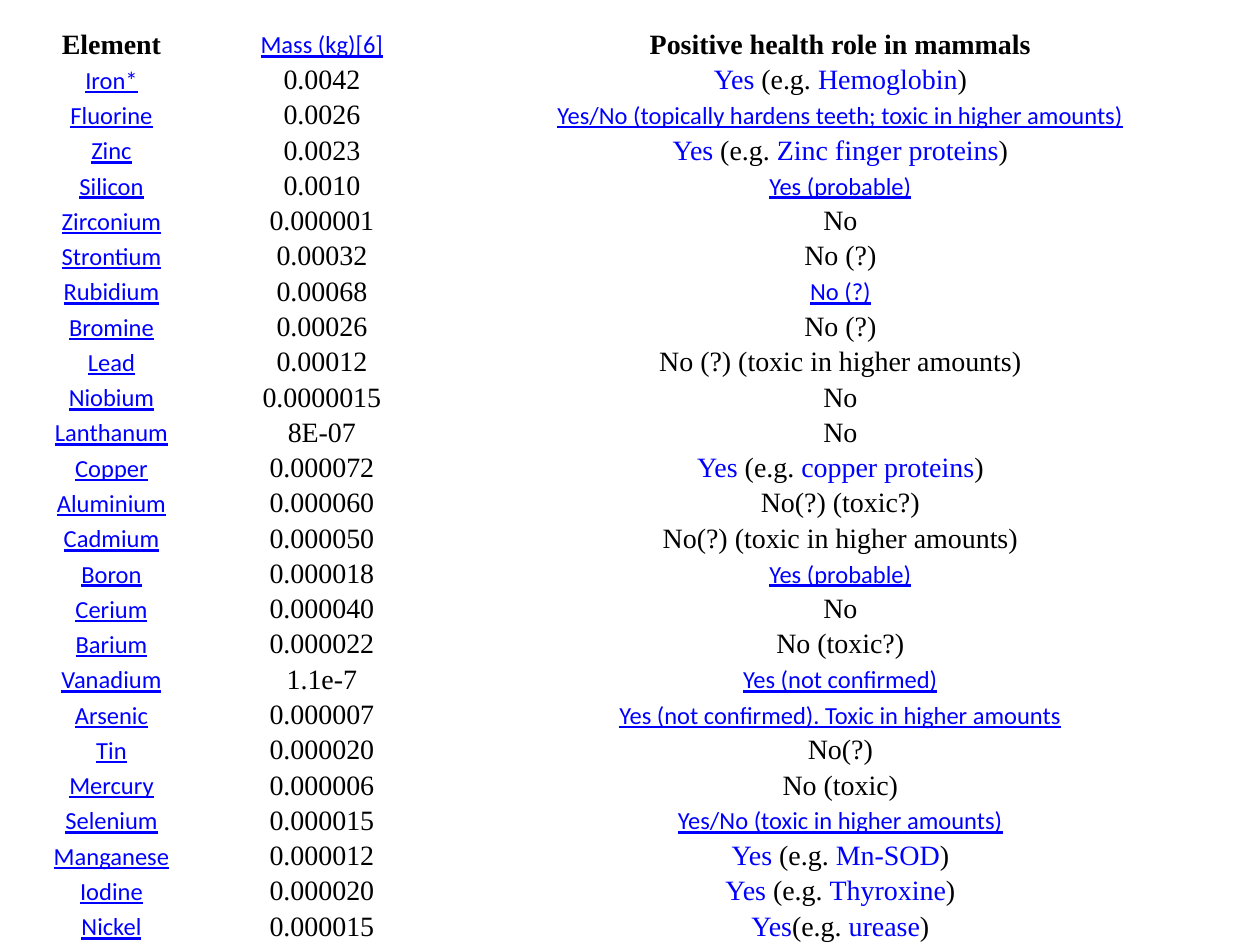
from typing import NamedTuple

from pptx import Presentation
from pptx.dml.color import RGBColor
from pptx.enum.text import MSO_ANCHOR, PP_ALIGN
from pptx.util import Inches, Pt

BLACK = RGBColor(0x00, 0x00, 0x00)
BLUE = RGBColor(0x00, 0x00, 0xFF)
BOTTOM = MSO_ANCHOR.BOTTOM
CENTER = PP_ALIGN.CENTER

# Text formats
SERIF = {"name": "Times New Roman", "size": Pt(16), "bold": False, "underline": False}
HEAD = SERIF | {"bold": True}
LINK = {"name": "Calibri", "size": Pt(14), "bold": False, "underline": True}

# Table layout
WIDTHS = (1.77, 1.57, 6.66)
HEAD_H, ROW_H = 0.49, 0.28
INSET = Inches(0.01)


class Part(NamedTuple):
    text: str
    style: dict
    color: RGBColor = BLACK


class Row(NamedTuple):
    name: str
    mass: str
    role: list[Part]


def plain(text: str) -> list[Part]:
    return [Part(text, SERIF)]


def link(text: str) -> list[Part]:
    return [Part(text, LINK, BLUE)]


def head(text: str) -> list[Part]:
    return [Part(text, HEAD)]


def yes(sample: str, gap: str = " ") -> list[Part]:
    """A positive role with its example in blue."""
    return [
        Part("Yes", SERIF, BLUE),
        Part(f"{gap}(e.g. ", SERIF),
        Part(sample, SERIF, BLUE),
        Part(")", SERIF),
    ]


ROWS = [
    Row("Iron*", "0.0042", yes("Hemoglobin")),
    Row("Fluorine", "0.0026",
        link("Yes/No (topically hardens teeth; toxic in higher amounts)")),
    Row("Zinc", "0.0023", yes("Zinc finger proteins")),
    Row("Silicon", "0.0010", link("Yes (probable)")),
    Row("Zirconium", "0.000001", plain("No")),
    Row("Strontium", "0.00032", plain("No (?)")),
    Row("Rubidium", "0.00068", link("No (?)")),
    Row("Bromine", "0.00026", plain("No (?)")),
    Row("Lead", "0.00012", plain("No (?) (toxic in higher amounts)")),
    Row("Niobium", "0.0000015", plain("No")),
    Row("Lanthanum", "8E-07", plain("No")),
    Row("Copper", "0.000072", yes("copper proteins")),
    Row("Aluminium", "0.000060", plain("No(?) (toxic?)")),
    Row("Cadmium", "0.000050", plain("No(?) (toxic in higher amounts)")),
    Row("Boron", "0.000018", link("Yes (probable)")),
    Row("Cerium", "0.000040", plain("No")),
    Row("Barium", "0.000022", plain("No (toxic?)")),
    Row("Vanadium", "1.1e-7", link("Yes (not confirmed)")),
    Row("Arsenic", "0.000007", link("Yes (not confirmed). Toxic in higher amounts")),
    Row("Tin", "0.000020", plain("No(?)")),
    Row("Mercury", "0.000006", plain("No (toxic)")),
    Row("Selenium", "0.000015", link("Yes/No (toxic in higher amounts)")),
    Row("Manganese", "0.000012", yes("Mn-SOD")),
    Row("Iodine", "0.000020", yes("Thyroxine")),
    Row("Nickel", "0.000015", yes("urease", gap="")),
]


def fill_cell(cell, parts: list[Part]) -> None:
    cell.fill.background()
    cell.vertical_anchor = BOTTOM
    for side in ("left", "top", "right", "bottom"):
        setattr(cell, f"margin_{side}", INSET)
    para = cell.text_frame.paragraphs[0]
    para.alignment = CENTER
    for part in parts:
        run = para.add_run()
        run.text = part.text
        for key, value in part.style.items():
            setattr(run.font, key, value)
        run.font.color.rgb = part.color


def add_grid(slide, grid: list[list[list[Part]]]) -> None:
    high = HEAD_H + ROW_H * (len(grid) - 1)
    table = slide.shapes.add_table(
        len(grid), len(WIDTHS), 0, 0, Inches(sum(WIDTHS)), Inches(high)
    ).table
    table.first_row = False
    table.horz_banding = False
    for col, width in zip(table.columns, WIDTHS):
        col.width = Inches(width)
    for i, (row, cells) in enumerate(zip(table.rows, grid)):
        row.height = Inches(ROW_H if i else HEAD_H)
        for cell, parts in zip(row.cells, cells):
            fill_cell(cell, parts)


def main() -> None:
    deck = Presentation()
    deck.slide_width, deck.slide_height = Inches(10), Inches(7.5)
    slide = deck.slides.add_slide(deck.slide_layouts[6])

    # Header row, then one row per element
    titles = [head("Element"), link("Mass (kg)[6]"),
              head("Positive health role in mammals")]
    body = [[link(row.name), plain(row.mass), row.role] for row in ROWS]
    add_grid(slide, [titles, *body])

    deck.save("out.pptx")


if __name__ == "__main__":
    main()
